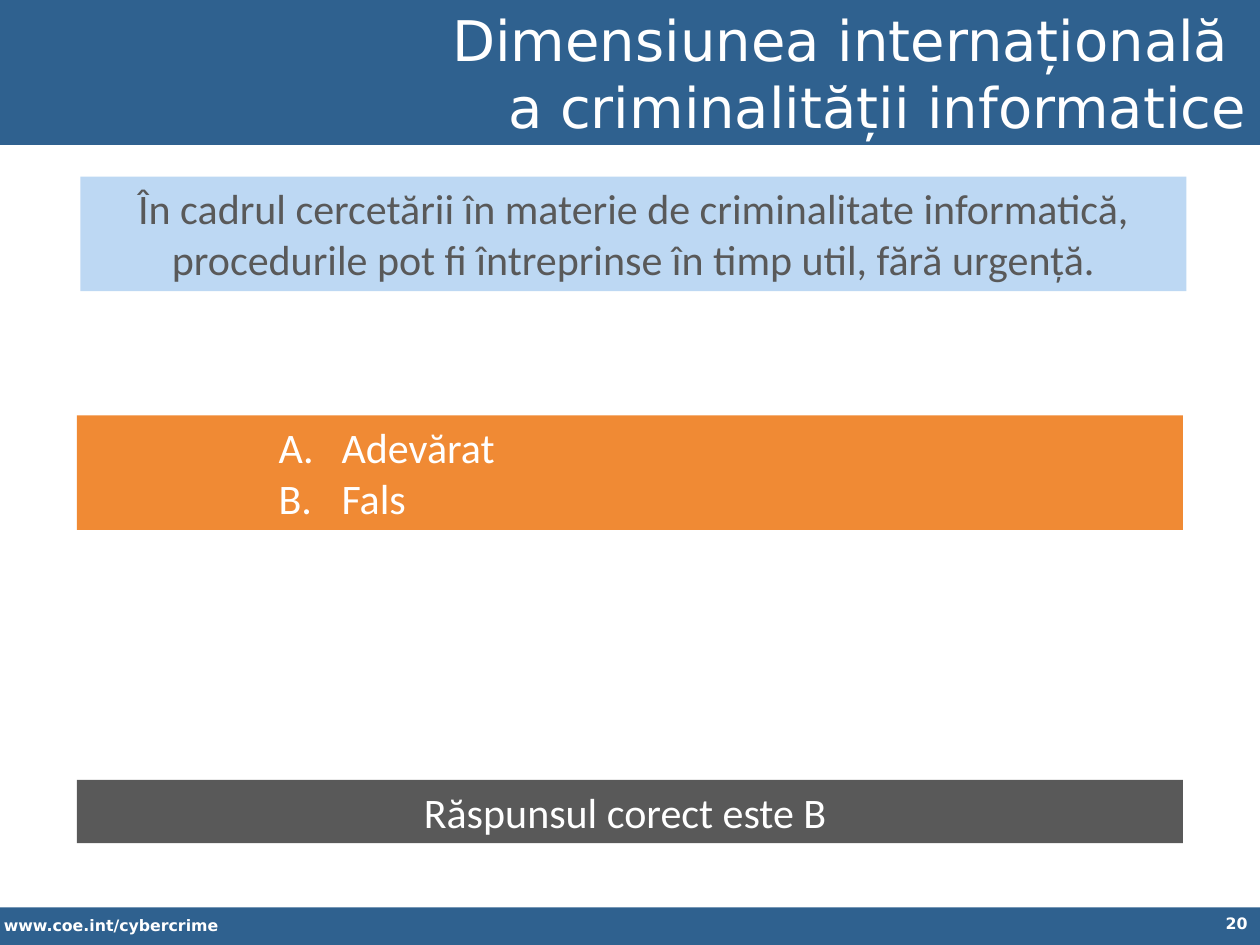
"""Build a quiz slide on the international dimension of cybercrime."""
from lxml import etree
from pptx import Presentation
from pptx.dml.color import RGBColor
from pptx.enum.shapes import MSO_SHAPE
from pptx.enum.text import MSO_ANCHOR, MSO_AUTO_SIZE, PP_ALIGN
from pptx.oxml.ns import qn
from pptx.util import Pt

RECTANGLE = MSO_SHAPE.RECTANGLE
TOP, MIDDLE = MSO_ANCHOR.TOP, MSO_ANCHOR.MIDDLE
LEFT, CENTER, RIGHT = PP_ALIGN.LEFT, PP_ALIGN.CENTER, PP_ALIGN.RIGHT
NO_FIT = MSO_AUTO_SIZE.NONE
COLORS = {"blue": "2F618F", "sky": "BDD8F3", "orange": "F08A34",
          "gray": "595959", "white": "FFFFFF"}
HEADING_FONT, BODY_FONT = "DejaVu Sans", "Calibri"
WIDTH, HEIGHT = 720, 540
PANEL_WIDTH = 632


def color(name):
    return RGBColor.from_string(COLORS[name])


def write(box, text, font=BODY_FONT, size=24, ink="white", bold=False,
          align=LEFT, anchor=TOP, numbered=False, inset=7.2):
    """Fill a box with one formatted paragraph per line of text."""
    frame = box.text_frame
    frame.word_wrap = True
    frame.auto_size = NO_FIT
    frame.vertical_anchor = anchor
    frame.margin_left = frame.margin_right = Pt(inset)
    frame.margin_top = frame.margin_bottom = Pt(3.6)
    frame.text = text
    for para in frame.paragraphs:
        para.alignment = align
        para.space_before = Pt(0)
        if numbered:
            properties = para._p.get_or_add_pPr()
            properties.set("marL", str(Pt(144)))
            properties.set("indent", str(Pt(-36)))
            etree.SubElement(properties, qn("a:buFont"), typeface="+mj-lt")
            etree.SubElement(properties, qn("a:buAutoNum"), type="alphaUcPeriod")
        for span in para.runs:
            span.font.name = font
            span.font.size = Pt(size)
            span.font.bold = bold
            span.font.color.rgb = color(ink)


class QuizPage:
    """Hold the deck style and the current slide."""

    def __init__(self, deck):
        self.page = deck.slides.add_slide(deck.slide_layouts[1])

    def panel(self, left, top, width, height, fill):
        box = self.page.shapes.add_shape(
            RECTANGLE, Pt(left), Pt(top), Pt(width), Pt(height))
        box.shadow.inherit = False
        box.fill.solid()
        box.fill.fore_color.rgb = color(fill)
        box.line.fill.background()
        return box

    def placeholder(self, index, left, top, width, height, fill):
        box = self.page.placeholders[index]
        box.left, box.top = Pt(left), Pt(top)
        box.width, box.height = Pt(width), Pt(height)
        box.fill.solid()
        box.fill.fore_color.rgb = color(fill)
        self.page.shapes._spTree.append(box.element)
        return box

    def label(self, text, left, top, width, height, **style):
        box = self.page.shapes.add_textbox(
            Pt(left), Pt(top), Pt(width), Pt(height))
        write(box, text, font=HEADING_FONT, size=9, bold=True, **style)


def main():
    deck = Presentation()
    deck.slide_width, deck.slide_height = Pt(WIDTH), Pt(HEIGHT)
    quiz = QuizPage(deck)

    quiz.panel(0, 0, WIDTH, 82.8, "blue")
    quiz.panel(0, 518.5, WIDTH, 21.5, "blue")
    quiz.label("www.coe.int/cybercrime", 0, 519.5, 248, 18, inset=2.2)
    quiz.label("20", 552, 518.5, 168, 21.5, align=RIGHT)

    title = quiz.placeholder(0, 158.4, 5, 561.6, 73, "blue")
    write(title, "Dimensiunea internațională \na criminalității informatice",
          font=HEADING_FONT, size=32, align=RIGHT, anchor=MIDDLE)

    question = quiz.panel(46, 101, PANEL_WIDTH, 65.4, "sky")
    write(question, "În cadrul cercetării în materie de criminalitate informatică, "
          "procedurile pot fi întreprinse în timp util, fără urgență.",
          ink="gray", align=CENTER)

    solution = quiz.panel(44, 445.6, PANEL_WIDTH, 36.2, "gray")
    write(solution, "Răspunsul corect este B ", align=CENTER)

    choices = quiz.placeholder(1, 44, 237.4, PANEL_WIDTH, 65.4, "orange")
    write(choices, "Adevărat\nFals", numbered=True)

    deck.save("out.pptx")


if __name__ == "__main__":
    main()
